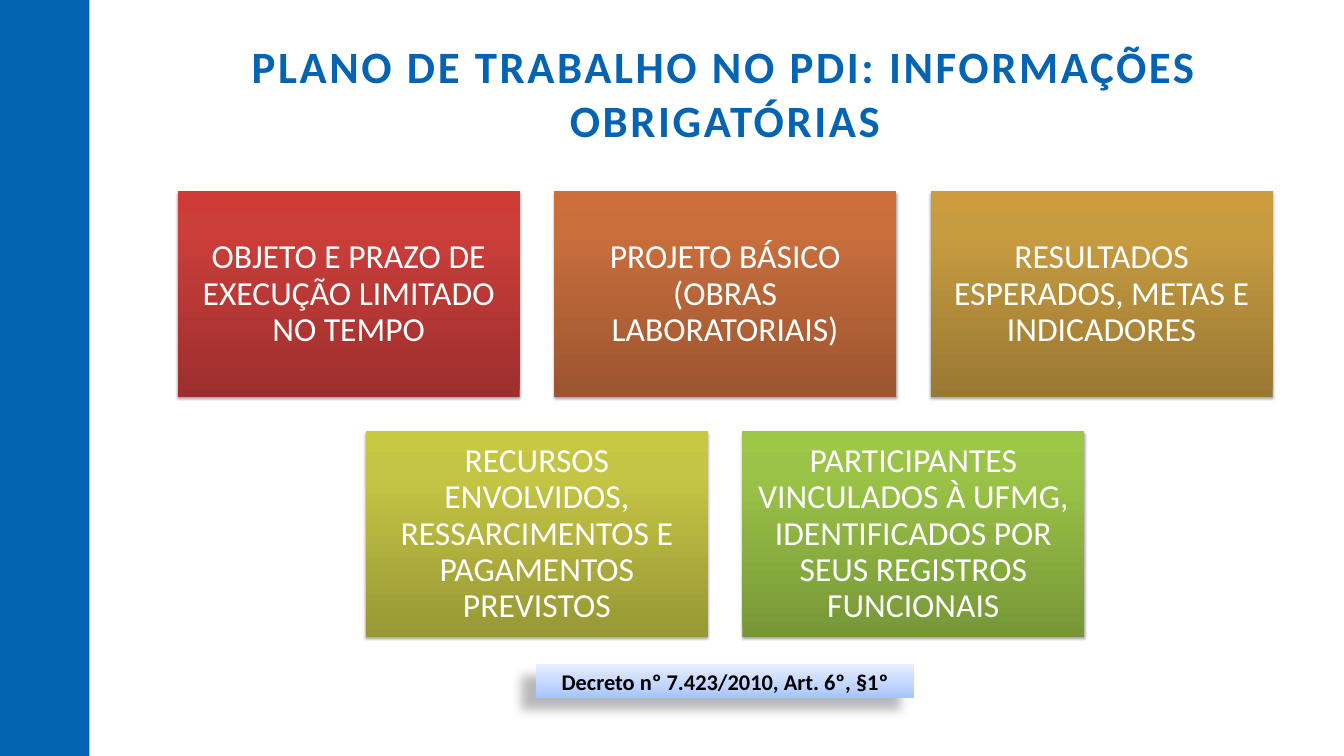
from copy import deepcopy
from dataclasses import dataclass

from lxml.etree import SubElement
from pptx import Presentation
from pptx.dml.color import RGBColor
from pptx.enum.shapes import MSO_SHAPE
from pptx.enum.text import MSO_ANCHOR, PP_ALIGN
from pptx.oxml.ns import qn
from pptx.util import Cm, Pt


@dataclass(frozen=True)
class Theme:
    font: str = "Calibri"
    blue: str = "0464B4"
    white: str = "FFFFFF"
    black: str = "000000"
    red: tuple = ("9C2F2D", "CB3E3A", "CE3B37")
    orange: tuple = ("9B552F", "C96E3D", "CD6E3B")
    gold: tuple = ("997832", "C79C41", "CB9D3F")
    olive: tuple = ("989835", "C5C545", "C8C942")
    green: tuple = ("779737", "9BC348", "9DC746")
    pale: tuple = ("A4C4FF", "BFD4FF", "E6EEFF")
    title: int = 48
    body: int = 36
    note: int = 24


THEME = Theme()

# Card grid, in centimetres
WIDTH, HEIGHT = 12.93, 7.77
STEP_X, STEP_Y = 14.23, 9.07
MIDDLE, TOP = 27.41, 7.24

ROWS = [
    [
        ("OBJETO E PRAZO DE EXECUÇÃO LIMITADO NO TEMPO", THEME.red),
        ("PROJETO BÁSICO (OBRAS LABORATORIAIS)", THEME.orange),
        ("RESULTADOS ESPERADOS, METAS E INDICADORES", THEME.gold),
    ],
    [
        ("RECURSOS ENVOLVIDOS, RESSARCIMENTOS E PAGAMENTOS PREVISTOS", THEME.olive),
        ("PARTICIPANTES VINCULADOS À UFMG, IDENTIFICADOS POR SEUS REGISTROS "
         "FUNCIONAIS", THEME.green),
    ],
]


def write(shape, text, size, color, bold=False, inset=None):
    frame = shape.text_frame
    frame.text = text
    frame.word_wrap = True
    if inset is not None:
        frame.margin_left = frame.margin_right = Cm(inset)
        frame.margin_top = frame.margin_bottom = Cm(inset)
    line = frame.paragraphs[0]
    line.alignment = PP_ALIGN.CENTER
    font = line.runs[0].font
    font.name, font.size, font.bold = THEME.font, Pt(size), bold
    font.color.rgb = RGBColor.from_string(color)
    return line


def add_rect(slide, left, top, width, height):
    rect = slide.shapes.add_shape(
        MSO_SHAPE.RECTANGLE, Cm(left), Cm(top), Cm(width), Cm(height))
    rect.shadow.inherit = False
    rect.line.fill.background()
    return rect


def shade(shape, colors, knee):
    """Fill from bottom to top with three colours; knee places the second."""
    fill = shape.fill
    fill.gradient()
    fill.gradient_angle = 90
    stops = shape._element.spPr.find(qn("a:gradFill")).find(qn("a:gsLst"))
    stops.append(deepcopy(stops[-1]))
    for stop, color, place in zip(fill.gradient_stops, colors, (0, knee, 1)):
        stop.color.rgb = RGBColor.from_string(color)
        stop.position = place


def cast(shape, alpha, blur, gap, angle):
    """Add an outer shadow: alpha in percent, blur and gap in points."""
    effects = shape._element.spPr.find(qn("a:effectLst"))
    outer = SubElement(
        effects, qn("a:outerShdw"), blurRad=str(Pt(blur)), dist=str(Pt(gap)),
        dir=str(angle * 60000), rotWithShape="0")
    color = SubElement(outer, qn("a:srgbClr"), val=THEME.black)
    SubElement(color, qn("a:alpha"), val=str(alpha * 1000))


def add_title(slide, text):
    box = slide.shapes.add_textbox(Cm(5.28), Cm(1.47), Cm(44.25), Cm(4.11))
    line = write(box, text, THEME.title, THEME.blue, bold=True, inset=0)
    line.runs[0].font._element.set("spc", "280")


def add_bar(slide):
    bar = add_rect(slide, -0.51, -0.64, 3.89, 29.72)
    bar.fill.solid()
    bar.fill.fore_color.rgb = RGBColor.from_string(THEME.blue)


def add_card(slide, left, top, text, colors):
    card = add_rect(slide, left, top, WIDTH, HEIGHT)
    shade(card, colors, 0.8)
    cast(card, 35, 3.1, 1.8, 90)
    line = write(card, text, THEME.body, THEME.white, inset=0.38)
    line.line_spacing = 0.9
    card.text_frame.vertical_anchor = MSO_ANCHOR.MIDDLE


def add_note(slide, text):
    note = add_rect(slide, 20.27, 25.12, 14.27, 1.27)
    shade(note, THEME.pale, 0.35)
    cast(note, 28, 11.8, 19.7, 141)
    write(note, text, THEME.note, THEME.black, bold=True)
    note.text_frame.vertical_anchor = MSO_ANCHOR.TOP


def main():
    deck = Presentation()
    deck.slide_width, deck.slide_height = Cm(50.8), Cm(28.58)
    slide = deck.slides.add_slide(deck.slide_layouts[6])

    # Heading and side bar
    add_title(slide, "PLANO DE TRABALHO NO PDI: INFORMAÇÕES OBRIGATÓRIAS")
    add_bar(slide)

    # Cards, each row centred
    for row, cards in enumerate(ROWS):
        start = MIDDLE - ((len(cards) - 1) * STEP_X + WIDTH) / 2
        for col, (text, colors) in enumerate(cards):
            add_card(slide, start + col * STEP_X, TOP + row * STEP_Y, text, colors)

    # Legal reference
    add_note(slide, "Decreto nº 7.423/2010, Art. 6º, §1º")
    deck.save("out.pptx")


if __name__ == "__main__":
    main()
